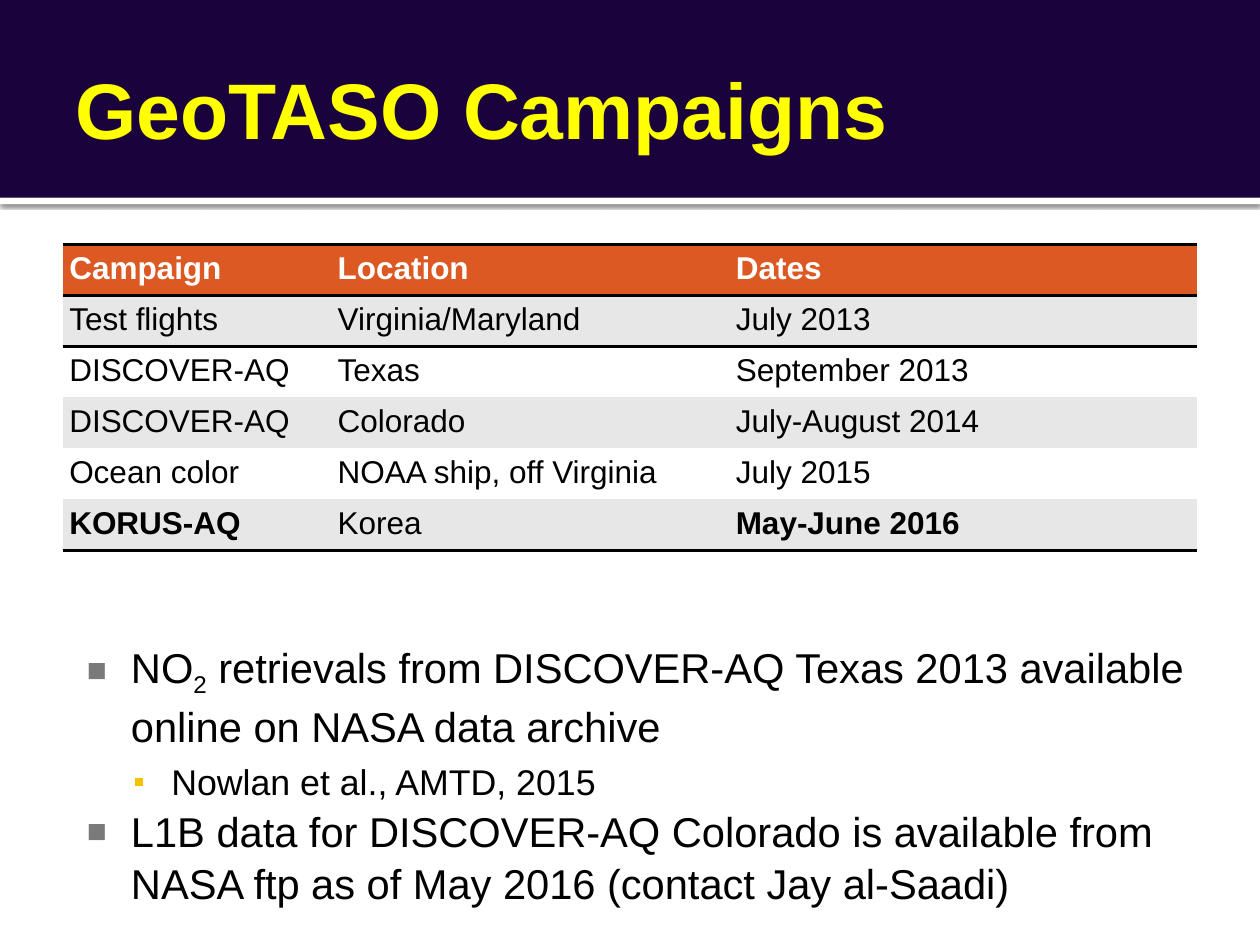
from lxml.etree import SubElement
from pptx import Presentation
from pptx.dml.color import RGBColor
from pptx.enum.shapes import MSO_SHAPE
from pptx.enum.text import MSO_ANCHOR
from pptx.oxml import parse_xml
from pptx.oxml.ns import nsdecls, qn
from pptx.util import Inches, Pt

BLACK = "000000"
WHITE = "FFFFFF"
NO_STYLE_NO_GRID = "{2D5ABB26-0587-4C30-8999-92F81FD0307C}"

CAMPAIGNS = [
    ("Campaign", "Location", "Dates"),
    ("Test flights", "Virginia/Maryland", "July 2013"),
    ("DISCOVER-AQ", "Texas", "September 2013"),
    ("DISCOVER-AQ", "Colorado", "July-August 2014"),
    ("Ocean color", "NOAA ship, off Virginia", "July 2015"),
    ("KORUS-AQ", "Korea", "May-June 2016"),
]
BOLD_ENTRIES = {"KORUS-AQ", "May-June 2016"}
COLUMN_WIDTHS = (2.13, 3.16, 3.71)
ROW_HEIGHT = 0.405


def rgb(hex_color):
    return RGBColor.from_string(hex_color)


def add_run(paragraph, text, *, size, color=BLACK, bold=False, baseline=None):
    run = paragraph.add_run()
    run.text = text
    run.font.name = "Arial"
    run.font.size = Pt(size)
    run.font.bold = bold
    run.font.color.rgb = rgb(color)
    if baseline is not None:
        run.font._element.set("baseline", str(baseline * 1000))


def set_margins(holder, left, top, right, bottom):
    """Set the inner margins of a text frame or a table cell, in inches."""
    holder.margin_left = Inches(left)
    holder.margin_top = Inches(top)
    holder.margin_right = Inches(right)
    holder.margin_bottom = Inches(bottom)


def add_band(slide, top, height, color):
    band = slide.shapes.add_shape(
        MSO_SHAPE.RECTANGLE, 0, Inches(top), Inches(10), Inches(height))
    band.shadow.inherit = False
    band.fill.solid()
    band.fill.fore_color.rgb = rgb(color)
    band.line.fill.background()
    return band


def add_drop_shadow(shape, *, blur, distance, opacity):
    effects = shape.element.spPr.find(qn("a:effectLst"))
    shadow = SubElement(effects, qn("a:outerShdw"), blurRad=str(Pt(blur)),
                        dist=str(Pt(distance)), dir="5400000", rotWithShape="0")
    color = SubElement(shadow, qn("a:srgbClr"), val=BLACK)
    SubElement(color, qn("a:alpha"), val=str(opacity * 1000))


def add_text_frame(slide, left, top, width, height, margins):
    box = slide.shapes.add_textbox(
        Inches(left), Inches(top), Inches(width), Inches(height))
    box.text_frame.word_wrap = True
    set_margins(box.text_frame, *margins)
    return box.text_frame


def set_bullet(paragraph, *, symbol, color, percent, indent, hanging):
    properties = paragraph._p.get_or_add_pPr()
    properties.set("marL", str(Inches(indent)))
    properties.set("indent", str(-Inches(hanging)))
    bullet_color = SubElement(properties, qn("a:buClr"))
    SubElement(bullet_color, qn("a:srgbClr"), val=color)
    SubElement(properties, qn("a:buSzPct"), val=str(percent * 1000))
    SubElement(properties, qn("a:buFont"), typeface="Arial")
    SubElement(properties, qn("a:buChar"), char=symbol)


def add_cell_rule(cell, edge):
    """Draw a black rule on the cell edge named by its tag, lnT or lnB."""
    cell._tc.get_or_add_tcPr().append(parse_xml(
        f'<a:{edge} {nsdecls("a")} w="{Pt(2)}"><a:solidFill>'
        f'<a:srgbClr val="{BLACK}"/></a:solidFill></a:{edge}>'))


def add_campaign_table(slide):
    frame = slide.shapes.add_table(
        len(CAMPAIGNS), len(COLUMN_WIDTHS), Inches(0.5), Inches(1.94),
        Inches(sum(COLUMN_WIDTHS)), Inches(ROW_HEIGHT * len(CAMPAIGNS)))
    frame.element.find(".//" + qn("a:tableStyleId")).text = NO_STYLE_NO_GRID
    table = frame.table
    for column, width in zip(table.columns, COLUMN_WIDTHS):
        column.width = Inches(width)
    last = len(CAMPAIGNS) - 1
    for row, entries in enumerate(CAMPAIGNS):
        table.rows[row].height = Inches(ROW_HEIGHT)
        header = row == 0
        fill = "DC5924" if header else "E7E7E7" if row % 2 else WHITE
        for column, entry in enumerate(entries):
            cell = table.cell(row, column)
            set_margins(cell, 0.05, 0.05, 0.05, 0.05)
            if header:
                add_cell_rule(cell, "lnT")
            if row in (0, last):
                add_cell_rule(cell, "lnB")
            if row == 1:
                add_cell_rule(cell, "lnT")
            cell.fill.solid()
            cell.fill.fore_color.rgb = rgb(fill)
            add_run(cell.text_frame.paragraphs[0], entry, size=18,
                    color=WHITE if header else BLACK,
                    bold=header or entry in BOLD_ENTRIES)


def add_title(slide):
    title = add_text_frame(slide, 0.5, 0.17, 9, 1.37, (0.1, 0.05, 0.05, 0.05))
    title.vertical_anchor = MSO_ANCHOR.MIDDLE
    add_run(title.paragraphs[0], "GeoTASO Campaigns",
            size=45, color="FFFF00", bold=True)


def add_data_notes(slide):
    notes = add_text_frame(slide, 0.5, 4.97, 9, 2.03, (0.06, 0.1, 0.1, 0.05))
    retrievals = notes.paragraphs[0]
    reference = notes.add_paragraph()
    level_one = notes.add_paragraph()
    for paragraph in notes.paragraphs:
        paragraph.line_spacing = 1.05
    reference.level = 1
    reference.space_before = Pt(4)

    for paragraph in (retrievals, level_one):
        set_bullet(paragraph, symbol="■", color="7A7A7A", percent=80,
                   indent=0.48, hanging=0.35)
    set_bullet(reference, symbol="▪", color="F5C201", percent=90,
               indent=0.8, hanging=0.3)

    add_run(retrievals, "NO", size=23.8)
    add_run(retrievals, "2", size=23.8, baseline=-25)
    add_run(retrievals, " retrievals from DISCOVER-AQ Texas 2013 available "
            "online on NASA data archive", size=23.8)
    add_run(reference, "Nowlan et al., AMTD, 2015", size=20.4)
    add_run(level_one, "L1B data for DISCOVER-AQ Colorado is available from "
            "NASA ftp as of May 2016 (contact Jay al-Saadi)", size=23.8)


def main():
    presentation = Presentation()
    presentation.slide_width = Inches(10)
    presentation.slide_height = Inches(7.5)
    slide = presentation.slides.add_slide(presentation.slide_layouts[6])

    stripe = add_band(slide, 1.57, 0.05, WHITE)
    add_drop_shadow(stripe, blur=2.5, distance=0.8, opacity=60)
    add_band(slide, 0, 1.57, "1A023C")
    add_title(slide)
    add_campaign_table(slide)
    add_data_notes(slide)
    presentation.save("out.pptx")


if __name__ == "__main__":
    main()
